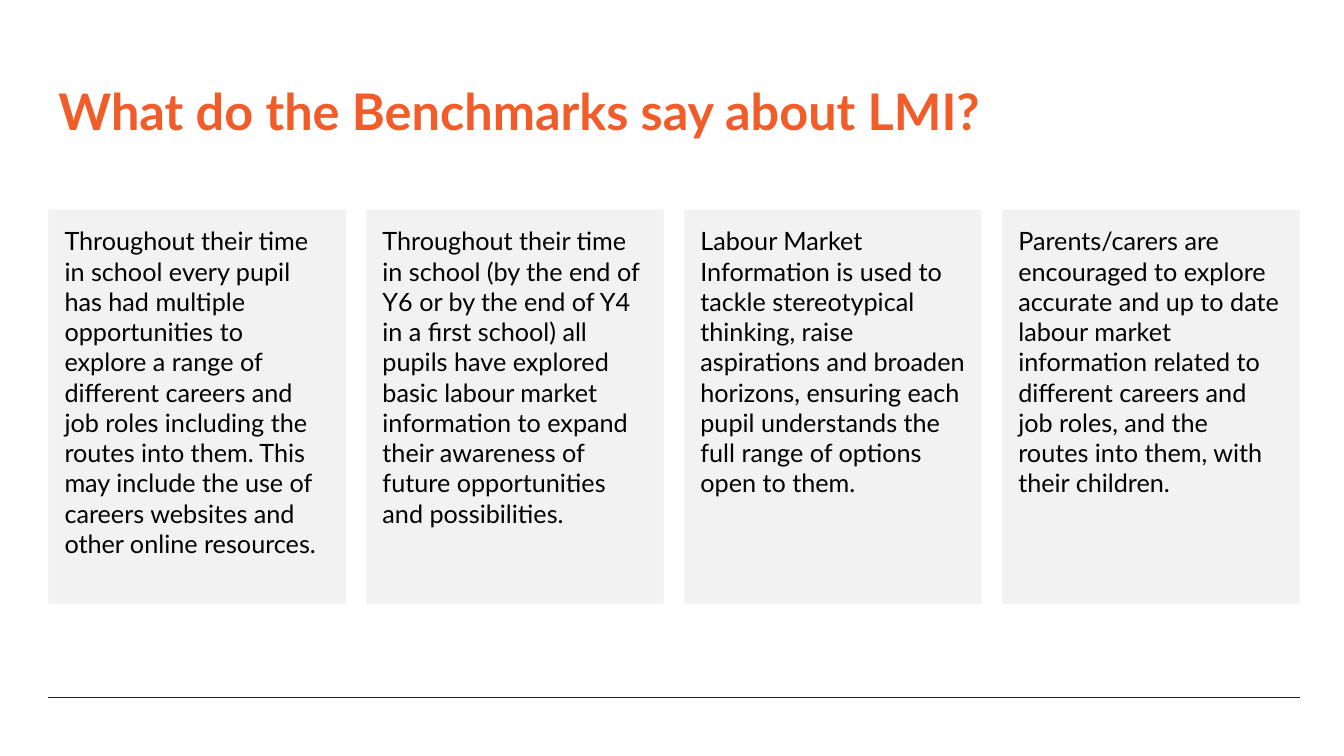
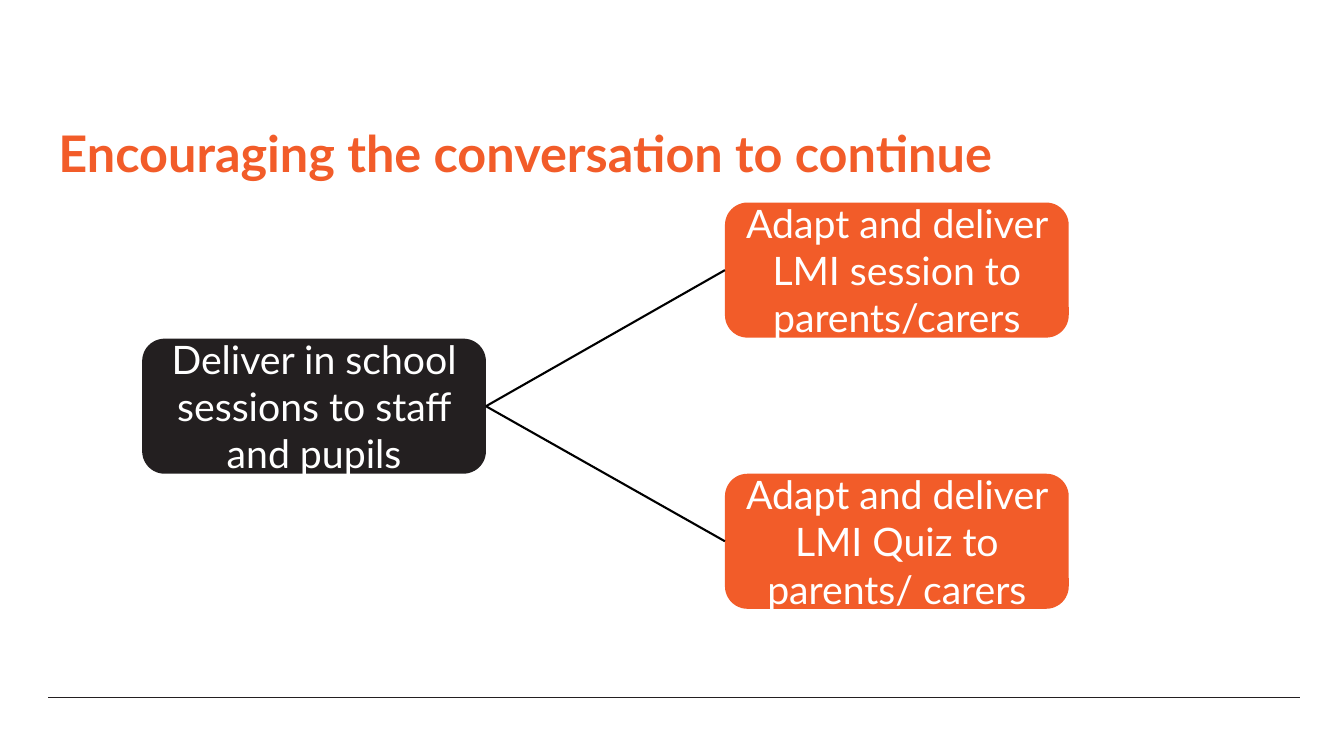
from lxml import etree
from pptx import Presentation
from pptx.dml.color import RGBColor
from pptx.enum.shapes import MSO_CONNECTOR, MSO_SHAPE
from pptx.enum.text import MSO_ANCHOR, MSO_AUTO_SIZE, PP_ALIGN
from pptx.oxml.ns import qn
from pptx.util import Inches, Pt

ROUND = MSO_SHAPE.ROUNDED_RECTANGLE
STRAIGHT = MSO_CONNECTOR.STRAIGHT
TOP, MIDDLE, BOTTOM = MSO_ANCHOR.TOP, MSO_ANCHOR.MIDDLE, MSO_ANCHOR.BOTTOM
LEFT, CENTER = PP_ALIGN.LEFT, PP_ALIGN.CENTER
NO_FIT = MSO_AUTO_SIZE.NONE

FONT = "Lato"
COLORS = {
    name: RGBColor.from_string(code)
    for name, code in {
        "orange": "F25C29",
        "ink": "231F20",
        "card": "F2F2F2",
        "black": "000000",
        "white": "FFFFFF",
    }.items()
}
EDGE, WIDTH = 0.48, 12.41

CARDS = [
    "Throughout their time in school every pupil has had multiple opportunities "
    "to explore a range of different careers and job roles including the routes "
    "into them. This may include the use of careers websites and other online "
    "resources.",
    "Throughout their time in school (by the end of Y6 or by the end of Y4 in a "
    "first school) all pupils have explored basic labour market information to "
    "expand their awareness of future opportunities and possibilities.",
    "Labour Market Information is used to tackle stereotypical thinking, raise "
    "aspirations and broaden horizons, ensuring each pupil understands the full "
    "range of options open to them.",
    "Parents/carers are encouraged to explore accurate and up to date labour "
    "market information related to different careers and job roles, and the "
    "routes into them, with their children.",
]
STEPS = [
    ("Deliver in school sessions to staff and pupils", 1.41, 3.36, "ink"),
    ("Adapt and deliver LMI Quiz to parents/ carers", 7.19, 4.7, "orange"),
    ("Adapt and deliver LMI session to parents/carers", 7.19, 2.01, "orange"),
]


def write(shape, text, size, color, align, anchor, bold=False):
    """Fill a shape with one formatted paragraph and return that paragraph."""
    frame = shape.text_frame
    frame.word_wrap = True
    frame.auto_size = NO_FIT
    frame.vertical_anchor = anchor
    para = frame.paragraphs[0]
    para.alignment = align
    para.space_before = Pt(0)
    run = para.add_run()
    run.text = text
    run.font.name = FONT
    run.font.size = Pt(size)
    run.font.bold = bold
    run.font.color.rgb = COLORS[color]
    return para


def link(slide, start, end, color, weight):
    """Draw a plain line between two points given in inches."""
    ends = [Inches(v) for v in (*start, *end)]
    line = slide.shapes.add_connector(STRAIGHT, *ends)
    line.line.color.rgb = COLORS[color]
    line.line.width = Pt(weight)
    etree.SubElement(line._element.spPr, qn("a:effectLst"))
    return line


deck = Presentation()
deck.slide_width, deck.slide_height = Inches(13.33), Inches(7.5)

# The comparison layout has four body placeholders, one for each card.
slides = []
for layout, text, top in (
    (4, "What do the Benchmarks say about LMI?", 0.4),
    (5, "Encouraging the conversation to continue", 0.82),
):
    slide = deck.slides.add_slide(deck.slide_layouts[layout])
    title = slide.shapes.title
    title.left, title.top = Inches(EDGE), Inches(top)
    title.width, title.height = Inches(WIDTH), Inches(1.05)
    para = write(title, text, 36, "orange", LEFT, BOTTOM, bold=True)
    para.line_spacing = 0.9
    link(slide, (EDGE, 6.92), (EDGE + WIDTH, 6.92), "ink", 0.5)
    slides.append(slide)
bench, talk = slides

# Benchmark cards
card_w = 2.95
pitch = (WIDTH - card_w) / (len(CARDS) - 1)
for i, text in enumerate(CARDS):
    card = bench.placeholders[i + 1]
    card.left, card.top = Inches(EDGE + i * pitch), Inches(2.08)
    card.width, card.height = Inches(card_w), Inches(3.91)
    card.fill.solid()
    card.fill.fore_color.rgb = COLORS["card"]
    frame = card.text_frame
    frame.margin_left = frame.margin_right = Inches(0.16)
    frame.margin_top = frame.margin_bottom = Inches(0.16)
    props = frame.paragraphs[0]._p.get_or_add_pPr()
    props.set("marL", "0")
    props.set("indent", "0")
    etree.SubElement(props, qn("a:buNone"))
    write(card, text, 18, "black", LEFT, TOP)

# Conversation steps
boxes = []
for text, left, top, color in STEPS:
    box = talk.shapes.add_shape(
        ROUND, Inches(left), Inches(top), Inches(3.41), Inches(1.34)
    )
    box.shadow.inherit = False
    box.fill.solid()
    box.fill.fore_color.rgb = COLORS[color]
    box.line.fill.background()
    write(box, text, 28, "white", CENTER, MIDDLE)
    boxes.append(box)

source, *targets = boxes
for target in targets:
    line = link(talk, (0, 0), (1, 1), "black", 1.5)
    line.begin_connect(source, 3)
    line.end_connect(target, 1)

deck.save("out.pptx")
